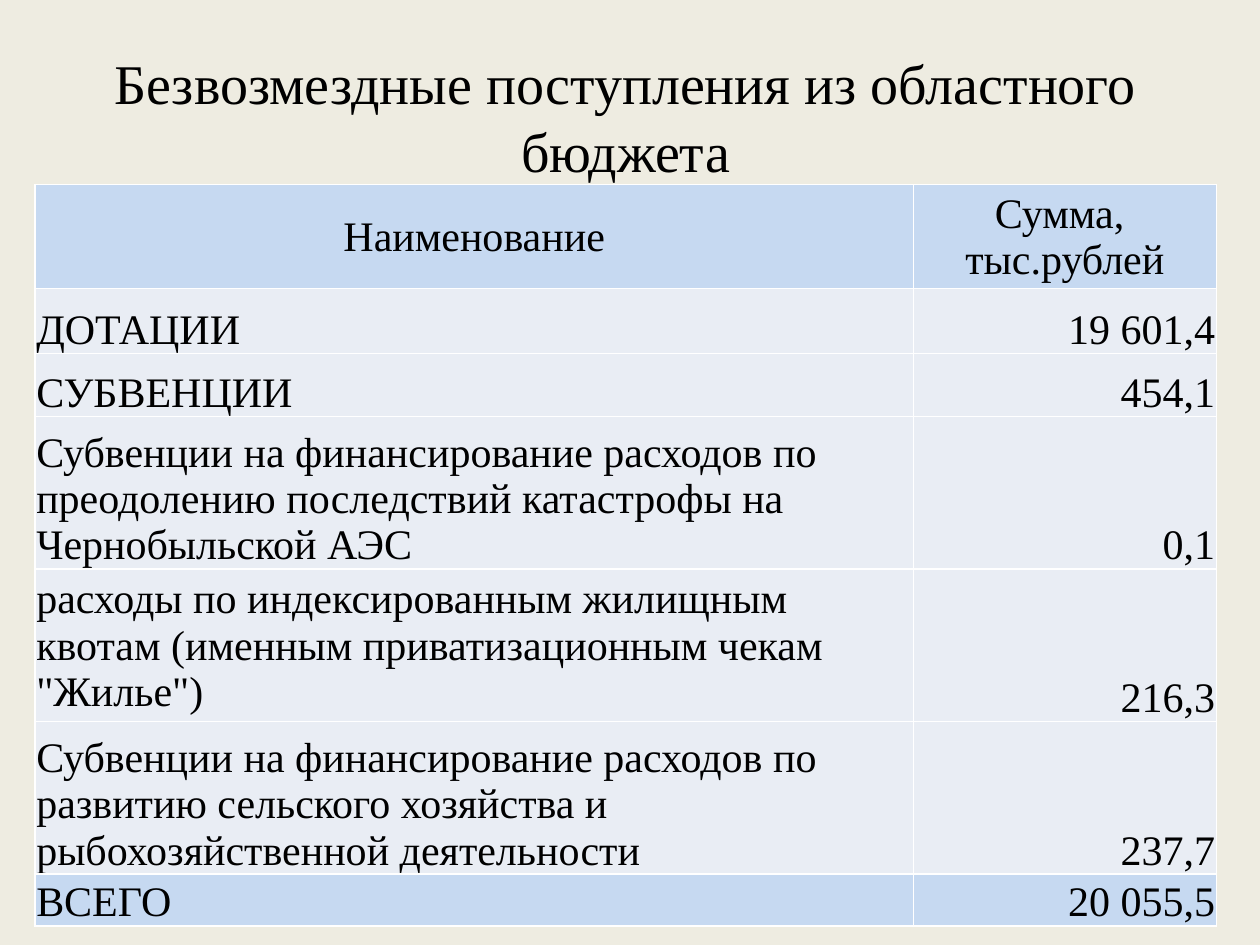
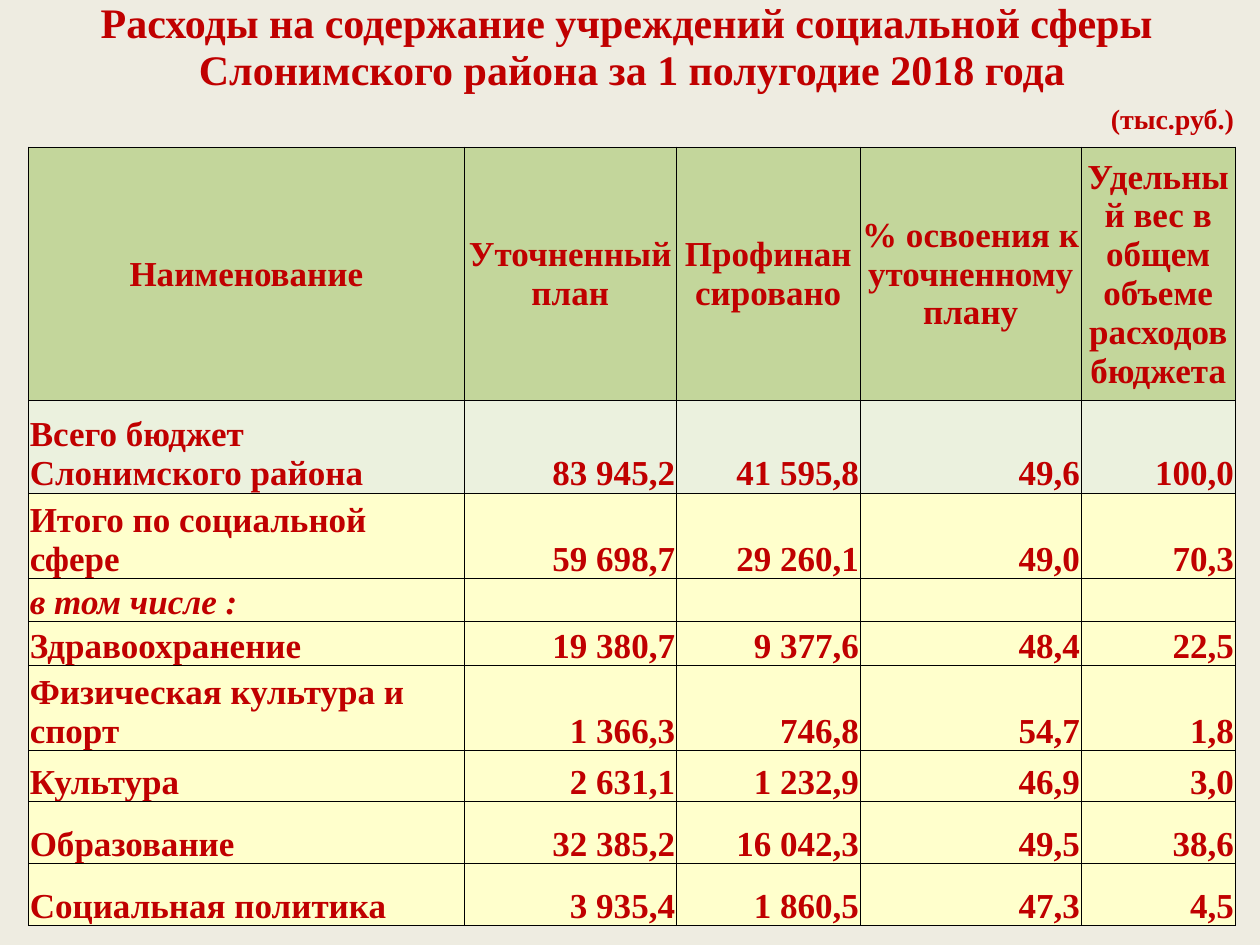
from dataclasses import dataclass

from lxml import etree
from pptx import Presentation
from pptx.dml.color import RGBColor
from pptx.enum.text import MSO_ANCHOR, PP_ALIGN
from pptx.oxml.ns import qn
from pptx.util import Pt

TOP, MIDDLE, BOTTOM = MSO_ANCHOR.TOP, MSO_ANCHOR.MIDDLE, MSO_ANCHOR.BOTTOM
LEFT, CENTER, RIGHT = PP_ALIGN.LEFT, PP_ALIGN.CENTER, PP_ALIGN.RIGHT


@dataclass(frozen=True)
class Theme:
    font: str = "Times New Roman"
    background: str = "EEECE1"
    black: str = "000000"
    white: str = "FFFFFF"
    red: str = "C00000"
    blue: str = "C6D9F1"
    pale_blue: str = "E9EDF4"
    green: str = "C3D69B"
    pale_green: str = "EBF1DE"
    yellow: str = "FFFFCC"
    title_size: int = 32
    large_size: int = 24
    body_size: int = 20
    unit_size: int = 16
    cell_inset: float = 0.72
    plain_table_style: str = "{2D5ABB26-0587-4C30-8999-92F81FD0307C}"


THEME = Theme()

RECEIPTS_TITLE = "Безвозмездные поступления из областного бюджета"
RECEIPTS_COLUMNS = [502, 173]
RECEIPTS_ROWS = [
    (59.4, THEME.blue, ["Наименование", "Сумма, \vтыс.рублей"]),
    (37.1, THEME.pale_blue, ["ДОТАЦИИ", "19 601,4"]),
    (36, THEME.pale_blue, ["СУБВЕНЦИИ", "454,1"]),
    (87, THEME.pale_blue, ["Субвенции на финансирование расходов по преодолению "
                           "последствий катастрофы на Чернобыльской АЭС", "0,1"]),
    (87.3, THEME.pale_blue, ["расходы по индексированным жилищным квотам "
                             "(именным приватизационным чекам \"Жилье\")", "216,3"]),
    (87, THEME.pale_blue, ["Субвенции на финансирование расходов по развитию "
                           "сельского хозяйства и рыбохозяйственной деятельности", "237,7"]),
    (29.6, THEME.blue, ["ВСЕГО", "20 055,5"]),
]
HOUSING_ROW = 4

SPENDING_TITLE = ("Расходы на содержание учреждений социальной сферы \v"
                  "Слонимского района за 1 полугодие 2018 года")
SPENDING_UNIT = "(тыс.руб.)"
SPENDING_COLUMNS = [249, 121.2, 105.1, 126.3, 88]
SPENDING_ROWS = [
    (59, None, [SPENDING_TITLE, "", "", "", ""]),
    (25, None, ["", "", "", "", SPENDING_UNIT]),
    (144.6, THEME.green, ["Наименование", "Уточненный план", "Профинан\nсировано",
                          "% освоения к уточненному плану",
                          "Удельный вес в общем объеме расходов бюджета"]),
    (53.1, THEME.pale_green, ["Всего бюджет Слонимского района",
                              "83 945,2", "41 595,8", "49,6", "100,0"]),
    (48.6, THEME.yellow, ["Итого по социальной сфере",
                          "59 698,7", "29 260,1", "49,0", "70,3"]),
    (24.6, THEME.yellow, ["в том числе :", "", "", "", ""]),
    (25, THEME.yellow, ["Здравоохранение", "19 380,7", "9 377,6", "48,4", "22,5"]),
    (48.6, THEME.yellow, ["Физическая культура и спорт",
                          "1 366,3", "746,8", "54,7", "1,8"]),
    (29.1, THEME.yellow, ["Культура", "2 631,1", "1 232,9", "46,9", "3,0"]),
    (35.4, THEME.yellow, ["Образование", "32 385,2", "16 042,3", "49,5", "38,6"]),
    (35.4, THEME.yellow, ["Социальная политика", "3 935,4", "1 860,5", "47,3", "4,5"]),
]
SPENDING_HEADER = 2
INCLUDING_ROW = 5


def add_slide(presentation):
    slide = presentation.slides.add_slide(presentation.slide_layouts[6])
    fill = slide.background.fill
    fill.solid()
    fill.fore_color.rgb = RGBColor.from_string(THEME.background)
    return slide


def style_text(text_frame, size, color, align, bold=False):
    for paragraph in text_frame.paragraphs:
        paragraph.alignment = align
        font = paragraph.font
        font.name, font.size, font.bold = THEME.font, Pt(size), bold
        font.color.rgb = RGBColor.from_string(color)


def set_borders(cell, color, width, sides):
    properties = cell._tc.get_or_add_tcPr()
    for index, side in enumerate(sides):
        line = etree.Element(qn(f"a:ln{side}"), w=str(int(Pt(width))))
        fill = etree.SubElement(line, qn("a:solidFill"))
        etree.SubElement(fill, qn("a:srgbClr"), val=color)
        properties.insert(index, line)


def add_table(slide, left, top, columns, rows, header, size, color, bold, border):
    frame = slide.shapes.add_table(len(rows), len(columns), Pt(left), Pt(top),
                                   Pt(sum(columns)), Pt(sum(row[0] for row in rows)))
    table = frame.table
    table.first_row = table.horz_banding = False
    table._tbl.tblPr.find(qn("a:tableStyleId")).text = THEME.plain_table_style
    for column, width in zip(table.columns, columns):
        column.width = Pt(width)
    for row_index, (height, fill, texts) in enumerate(rows):
        table.rows[row_index].height = Pt(height)
        for column_index, text in enumerate(texts):
            cell = table.cell(row_index, column_index)
            cell.text = text
            cell.margin_left = cell.margin_right = cell.margin_top = Pt(THEME.cell_inset)
            cell.margin_bottom = 0
            cell.vertical_anchor = MIDDLE if row_index == header else BOTTOM
            align = CENTER if row_index == header else RIGHT if column_index else LEFT
            style_text(cell.text_frame, size, color, align, bold)
            if fill:
                cell.fill.solid()
                cell.fill.fore_color.rgb = RGBColor.from_string(fill)
                set_borders(cell, *border, "LRTB")
            else:
                cell.fill.background()
    return table


def build_receipts(presentation):
    slide = add_slide(presentation)
    title = slide.shapes.add_textbox(Pt(20), Pt(21), Pt(675), Pt(124)).text_frame
    title.word_wrap = True
    title.margin_top = Pt(7)
    title.text = RECEIPTS_TITLE
    style_text(title, THEME.title_size, THEME.black, CENTER)
    table = add_table(slide, 20, 105.5, RECEIPTS_COLUMNS, RECEIPTS_ROWS, 0,
                      THEME.large_size, THEME.black, False, (THEME.white, 1))
    table.cell(HOUSING_ROW, 0).vertical_anchor = MIDDLE


def build_spending(presentation):
    slide = add_slide(presentation)
    border = (THEME.black, 0.5)
    table = add_table(slide, 16.3, 0, SPENDING_COLUMNS, SPENDING_ROWS, SPENDING_HEADER,
                      THEME.body_size, THEME.red, True, border)
    last = len(SPENDING_COLUMNS) - 1
    title, unit = table.cell(0, 0), table.cell(1, last)
    title.merge(table.cell(0, last))
    title.vertical_anchor = unit.vertical_anchor = TOP
    style_text(title.text_frame, THEME.large_size, THEME.red, CENTER, True)
    style_text(unit.text_frame, THEME.unit_size, THEME.red, RIGHT, True)
    for column_index in range(last + 1):
        set_borders(table.cell(1, column_index), *border, "B")
    table.cell(INCLUDING_ROW, 0).text_frame.paragraphs[0].font.italic = True


def main():
    presentation = Presentation()
    presentation.slide_width, presentation.slide_height = Pt(720), Pt(540)
    build_receipts(presentation)
    build_spending(presentation)
    presentation.save("out.pptx")


if __name__ == "__main__":
    main()
